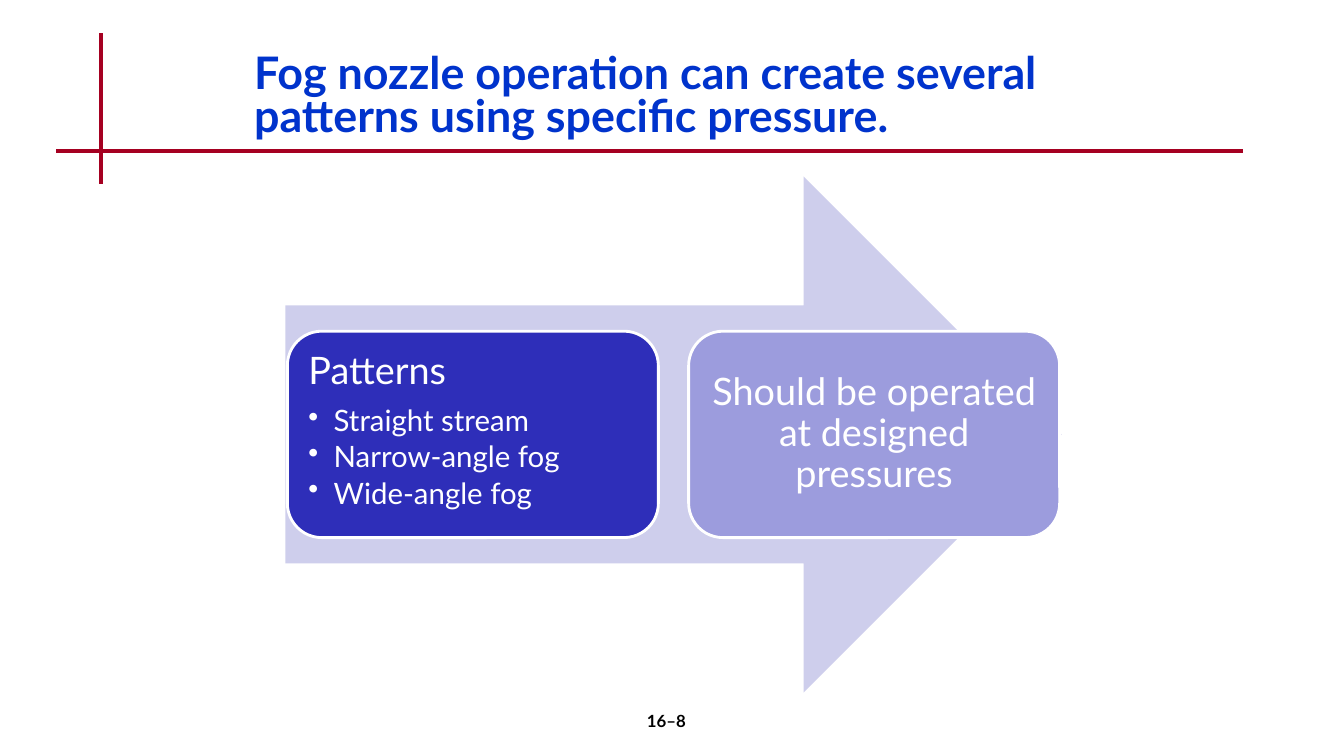
from dataclasses import dataclass

from lxml import etree
from pptx import Presentation
from pptx import util as u
from pptx.dml.color import RGBColor
from pptx.enum import shapes, text
from pptx.oxml import ns


@dataclass(frozen=True)
class Theme:
    """Hold the colours, font and type sizes of the slide."""
    font: str = "Lato"
    rule: str = "A50021"
    title: str = "0033CC"
    arrow: str = "CECEEC"
    dark_card: str = "2E2EB9"
    light_card: str = "9C9CDD"
    white: str = "FFFFFF"
    black: str = "000000"
    title_size: float = 32
    heading_size: float = 27
    bullet_size: float = 21
    number_size: float = 12


THEME = Theme()


def style(p, size, color, bold=False):
    """Format every run of a paragraph."""
    for r in p.runs:
        r.font.name = THEME.font
        r.font.size = u.Pt(size)
        r.font.bold = bold
        r.font.color.rgb = RGBColor.from_string(color)


def add_shape(s, kind, box, fill):
    """Add a flat filled shape without an outline."""
    sp = s.shapes.add_shape(kind, *map(u.Inches, box))
    sp.shadow.inherit = False
    sp.fill.solid()
    sp.fill.fore_color.rgb = RGBColor.from_string(fill)
    sp.line.fill.background()
    return sp


def add_rule(s, x1, y1, x2, y2):
    """Draw one straight red rule."""
    line = s.shapes.add_connector(
        shapes.MSO_CONNECTOR.STRAIGHT, *map(u.Inches, (x1, y1, x2, y2)))
    line.line.color.rgb = RGBColor.from_string(THEME.rule)
    line.line.width = u.Pt(3)
    etree.SubElement(line._element.spPr, ns.qn("a:effectLst"))


def add_header(s, box, title):
    """Place the crossed rules and the title in the header box."""
    x, y, w, h = box
    add_rule(s, x + 0.44, y, x + 0.44, y + h)
    add_rule(s, x, y + 1.17, x + w, y + 1.17)
    sp = s.shapes.title
    sp.left, sp.top, sp.width, sp.height = map(
        u.Inches, (x + 1.86, y + 0.17, 9.25, 1))
    tf = sp.text_frame
    tf.text = title
    tf.auto_size = text.MSO_AUTO_SIZE.NONE
    tf.vertical_anchor = text.MSO_ANCHOR.TOP
    p = tf.paragraphs[0]
    p.alignment = text.PP_ALIGN.LEFT
    p.line_spacing = 0.8
    style(p, THEME.title_size, THEME.title, True)


def add_bullet(p):
    """Give a paragraph a hanging round bullet."""
    pPr = p._p.get_or_add_pPr()
    pPr.set("marL", str(u.Inches(0.25)))
    pPr.set("indent", str(u.Inches(-0.25)))
    etree.SubElement(pPr, ns.qn("a:buChar"), char="•")


def add_card(s, box, fill, heading, bullets=()):
    """Add a rounded card with a heading and an optional list."""
    sp = add_shape(s, shapes.MSO_SHAPE.ROUNDED_RECTANGLE, box, fill)
    sp.line.color.rgb = RGBColor.from_string(THEME.white)
    sp.line.width = u.Pt(2)
    tf = sp.text_frame
    tf.word_wrap = True
    tf.margin_left = tf.margin_right = u.Inches(0.11)
    tf.margin_top = tf.margin_bottom = u.Inches(0.11)
    tf.vertical_anchor = text.MSO_ANCHOR.TOP if bullets else text.MSO_ANCHOR.MIDDLE
    p = tf.paragraphs[0]
    p.text = heading
    p.alignment = text.PP_ALIGN.LEFT if bullets else text.PP_ALIGN.CENTER
    p.line_spacing = 0.9
    p.space_after = u.Pt(0.35 * THEME.heading_size)
    style(p, THEME.heading_size, THEME.white)
    for bullet in bullets:
        p = tf.add_paragraph()
        p.text = bullet
        p.level = 1
        p.alignment = text.PP_ALIGN.LEFT
        p.line_spacing = 0.9
        p.space_after = u.Pt(0.15 * THEME.bullet_size)
        add_bullet(p)
        style(p, THEME.bullet_size, THEME.white)


def add_process(s, box, cards):
    """Place equal cards in a row over a wide arrow."""
    x, y, w, h = box
    add_shape(s, shapes.MSO_SHAPE.RIGHT_ARROW, box, THEME.arrow)
    card_w, card_h, gap = 3.68, 0.4 * h, 0.3
    row_w = len(cards) * card_w + (len(cards) - 1) * gap
    left, top = x + (w - row_w) / 2, y + (h - card_h) / 2
    for i, card in enumerate(cards):
        add_card(s, (left + i * (card_w + gap), top, card_w, card_h), *card)


def add_page_number(s, box, number):
    """Place the page number centred in its box."""
    tf = s.shapes.add_textbox(*map(u.Inches, box)).text_frame
    tf.word_wrap = True
    tf.text = number
    p = tf.paragraphs[0]
    p.alignment = text.PP_ALIGN.CENTER
    style(p, THEME.number_size, THEME.black, True)


def main():
    """Build the slide and save it."""
    prs = Presentation()
    prs.slide_width, prs.slide_height = u.Inches(13.33), u.Inches(7.5)
    s = prs.slides.add_slide(prs.slide_layouts[5])
    add_header(s, (0.56, 0.33, 11.77, 1.5),
               "Fog nozzle operation can create several patterns "
               "using specific pressure.")
    add_process(s, (2.83, 1.75, 7.7, 5.12), [
        (THEME.dark_card, "Patterns",
         ("Straight stream", "Narrow-angle fog", "Wide-angle fog")),
        (THEME.light_card, "Should be operated at designed pressures"),
    ])
    add_page_number(s, (5.22, 7, 2.78, 0.5), "16–8")
    prs.save("out.pptx")


if __name__ == "__main__":
    main()
